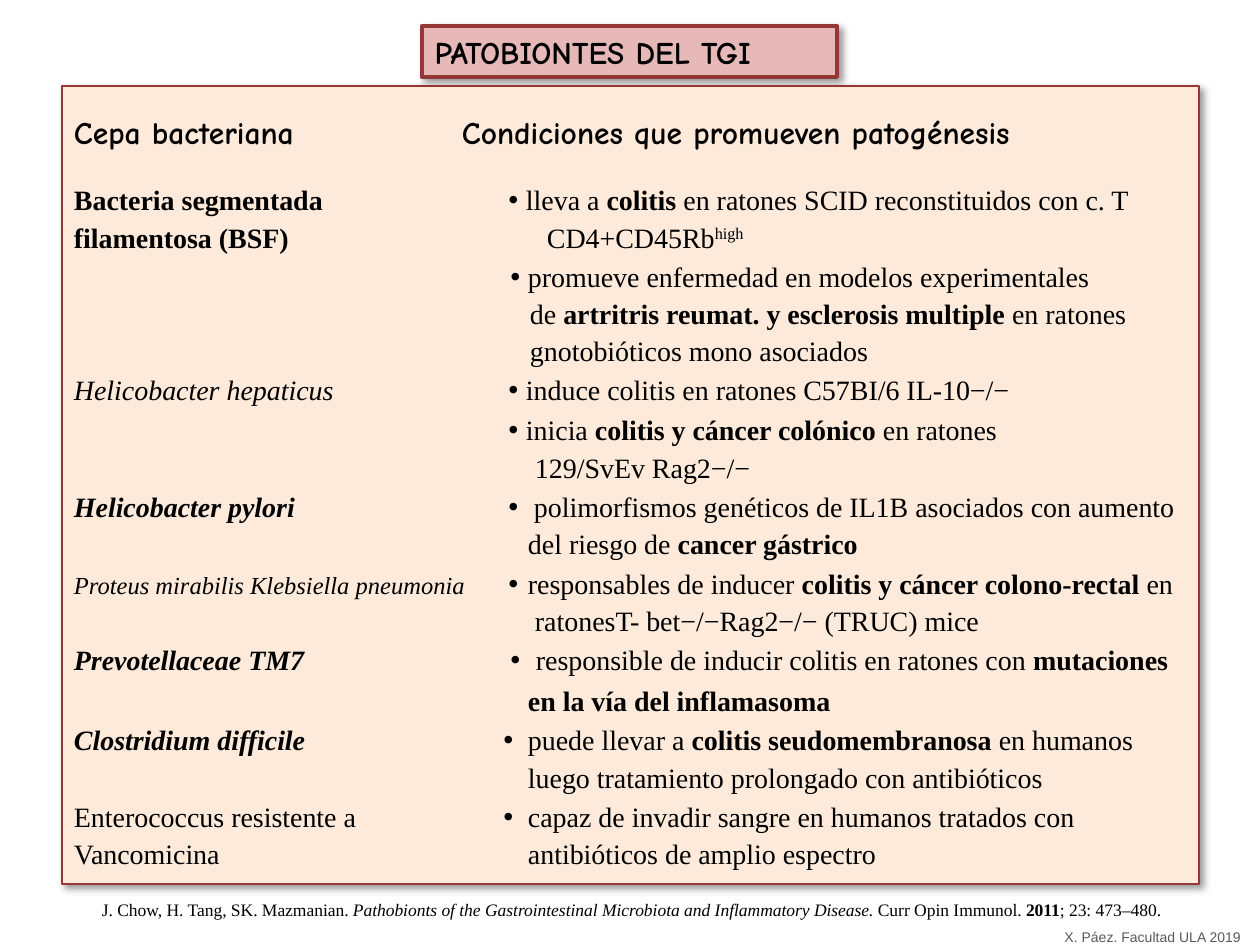
from dataclasses import dataclass

from lxml.etree import SubElement
from pptx import Presentation
from pptx.dml.color import RGBColor
from pptx.enum.shapes import MSO_SHAPE as Shape
from pptx.enum.text import MSO_ANCHOR as Anchor, MSO_AUTO_SIZE as AutoSize, PP_ALIGN as Align
from pptx.oxml.ns import qn
from pptx.util import Emu, Pt

PX = 914400 // 126
COLORS = {
    "ink": "000000",
    "muted": "595959",
    "border": "953735",
    "title": "E6B9B8",
    "panel": "FDEADA",
}
HEADING, BODY, SMALL = "Comic Neue", "Times New Roman", "Arial"
TEXT_LEFT = 74
BULLET_PITCH, WRAP_PITCH = Pt(22.9), Pt(20.9)


@dataclass(frozen=True)
class Span:
    text: str
    bold: bool = False
    italic: bool = False
    size: int = 16
    raised: bool = False


@dataclass(frozen=True)
class Line:
    """One line of the list: strain on the left, condition on the right."""
    condition: tuple[Span, ...]
    strain: Span | None = None
    bullet_x: int | None = None
    text_x: int = 528
    pitch: int = WRAP_PITCH


def bulleted(*condition: Span, strain: Span | None = None,
             bullet_x: int = 508, text_x: int = 528) -> Line:
    return Line(condition, strain, bullet_x, text_x, BULLET_PITCH)


def bold(text: str) -> Span:
    return Span(text, bold=True)


def species(text: str) -> Span:
    return Span(text, bold=True, italic=True)


LINES = [
    bulleted(Span("lleva a "), bold("colitis "),
             Span("en ratones SCID reconstituidos con c. T"),
             strain=bold("Bacteria segmentada"), text_x=526),
    Line((Span("CD4+CD45Rb"), Span("high", raised=True)),
         bold("filamentosa (BSF)"), text_x=547),
    bulleted(Span("promueve enfermedad en modelos experimentales"), bullet_x=510),
    Line((Span("de "), bold("artritris reumat. y esclerosis multiple "),
          Span("en ratones")), text_x=530),
    Line((Span("gnotobióticos mono asociados"),), text_x=530),
    bulleted(Span("induce colitis en ratones C57BI/6 IL-10−/−"),
             strain=Span("Helicobacter hepaticus", italic=True), text_x=526),
    bulleted(Span("inicia "), bold("colitis y cáncer colónico "),
             Span("en ratones"), text_x=526),
    Line((Span("129/SvEv Rag2−/−"),), text_x=535),
    bulleted(Span("polimorfismos genéticos de IL1B asociados con aumento"),
             strain=species("Helicobacter pylori"), text_x=534),
    Line((Span("del riesgo de "), bold("cancer gástrico"))),
    bulleted(Span("responsables de inducer "), bold("colitis y cáncer colono-rectal"),
             Span(" en"),
             strain=Span("Proteus mirabilis Klebsiella pneumonia", italic=True, size=14)),
    Line((Span("ratonesT- bet−/−Rag2−/− (TRUC) mice"),), text_x=535),
    bulleted(Span("responsible de inducir colitis en ratones con "), bold("mutaciones"),
             strain=species("Prevotellaceae TM7"), bullet_x=510, text_x=536),
    Line((bold("en la vía del inflamasoma"),), pitch=BULLET_PITCH),
    bulleted(Span("puede llevar a "), bold("colitis seudomembranosa "),
             Span("en humanos"),
             strain=species("Clostridium difficile"), bullet_x=503),
    Line((Span("luego tratamiento prolongado con antibióticos"),)),
    bulleted(Span("capaz de invadir sangre en humanos tratados con"),
             strain=Span("Enterococcus resistente a"), bullet_x=503),
    Line((Span("antibióticos de amplio espectro"),), Span("Vancomicina")),
]
CITATION = [
    Span("J. Chow, H. Tang, SK. Mazmanian. ", size=10),
    Span("Pathobionts of the Gastrointestinal Microbiota and Inflammatory Disease. ",
         italic=True, size=10),
    Span("Curr Opin Immunol. ", size=10),
    Span("2011", bold=True, size=10),
    Span("; 23: 473–480.", size=10),
]


def px(length: int) -> Emu:
    return Emu(length * PX)


def rgb(name: str) -> RGBColor:
    return RGBColor.from_string(COLORS[name])


def place(shape, left: int, top: int, width: int, height: int) -> None:
    shape.left, shape.top, shape.width, shape.height = map(px, (left, top, width, height))


def add_span(paragraph, span: Span, face: str = BODY, color: str = "ink") -> None:
    run = paragraph.add_run()
    run.text = span.text
    font = run.font
    font.name, font.size = face, Pt(span.size)
    font.bold, font.italic = span.bold, span.italic
    font.color.rgb = rgb(color)
    if span.raised:
        run.font._element.set("baseline", "30000")


def add_tabs(paragraph, *stops: int) -> None:
    """Set left tab stops, given as slide positions."""
    tabs = SubElement(paragraph._p.get_or_add_pPr(), qn("a:tabLst"))
    for stop in stops:
        SubElement(tabs, qn("a:tab"), pos=str(px(stop - TEXT_LEFT)), algn="l")


def style_card(shape, fill: str, line_width: float) -> None:
    """Fill and outline a rectangle and give it a soft diagonal shadow."""
    shape.fill.solid()
    shape.fill.fore_color.rgb = rgb(fill)
    shape.line.color.rgb = rgb("border")
    shape.line.width = Pt(line_width)
    shape.shadow.inherit = False
    effects = shape._element.spPr.find(qn("a:effectLst"))
    shadow = SubElement(effects, qn("a:outerShdw"), blurRad=str(Pt(4)), dist=str(Pt(3)),
                        dir="2700000", algn="tl", rotWithShape="0")
    ink = SubElement(shadow, qn("a:srgbClr"), val=COLORS["ink"])
    SubElement(ink, qn("a:alpha"), val="40000")


def add_title(slide) -> None:
    title = slide.shapes.title
    place(title, 422, 26, 415, 51)
    style_card(title, "title", 2.25)
    frame = title.text_frame
    frame.auto_size, frame.vertical_anchor = AutoSize.NONE, Anchor.MIDDLE
    heading = frame.paragraphs[0]
    heading.alignment = Align.LEFT
    add_span(heading, Span("PATOBIONTES DEL TGI", bold=True, size=18), HEADING)


def add_line(paragraph, line: Line) -> None:
    stops = [line.text_x] if line.bullet_x is None else [line.bullet_x, line.text_x]
    add_tabs(paragraph, *stops)
    paragraph.alignment = Align.LEFT
    paragraph.line_spacing = line.pitch
    if line.strain:
        add_span(paragraph, line.strain)
    add_span(paragraph, Span("\t"))
    if line.bullet_x is not None:
        add_span(paragraph, Span("•\t", size=18))
    for span in line.condition:
        add_span(paragraph, span)


def add_panel(slide) -> None:
    panel = slide.shapes.add_shape(Shape.RECTANGLE, 0, 0, 0, 0)
    place(panel, 62, 86, 1137, 798)
    style_card(panel, "panel", 0.75)
    frame = panel.text_frame
    frame.word_wrap, frame.vertical_anchor = True, Anchor.TOP
    frame.margin_left = frame.margin_right = px(12)
    frame.margin_top = px(25)
    header = frame.paragraphs[0]
    add_tabs(header, 462)
    header.alignment, header.line_spacing = Align.LEFT, BULLET_PITCH
    add_span(header, Span("Cepa bacteriana\tCondiciones que promueven patogénesis",
                          bold=True, size=18), HEADING)
    for number, line in enumerate(LINES):
        paragraph = frame.add_paragraph()
        add_line(paragraph, line)
        if number == 0:
            paragraph.space_before = px(26)


def add_note(slide, box: tuple[int, int, int, int], spans: list[Span], face: str,
             color: str, alignment: Align) -> None:
    frame = slide.shapes.add_textbox(*map(px, box)).text_frame
    frame.word_wrap = True
    paragraph = frame.paragraphs[0]
    paragraph.alignment = alignment
    for span in spans:
        add_span(paragraph, span, face, color)


def main() -> None:
    deck = Presentation()
    deck.slide_width, deck.slide_height = px(1260), px(945)
    slide = deck.slides.add_slide(deck.slide_layouts[5])
    add_title(slide)
    add_panel(slide)
    add_note(slide, (84, 893, 1095, 35), CITATION, BODY, "ink", Align.CENTER)
    add_note(slide, (1052, 922, 206, 30), [Span("X. Páez. Facultad ULA 2019", size=8)],
             SMALL, "muted", Align.LEFT)
    deck.save("out.pptx")


if __name__ == "__main__":
    main()
